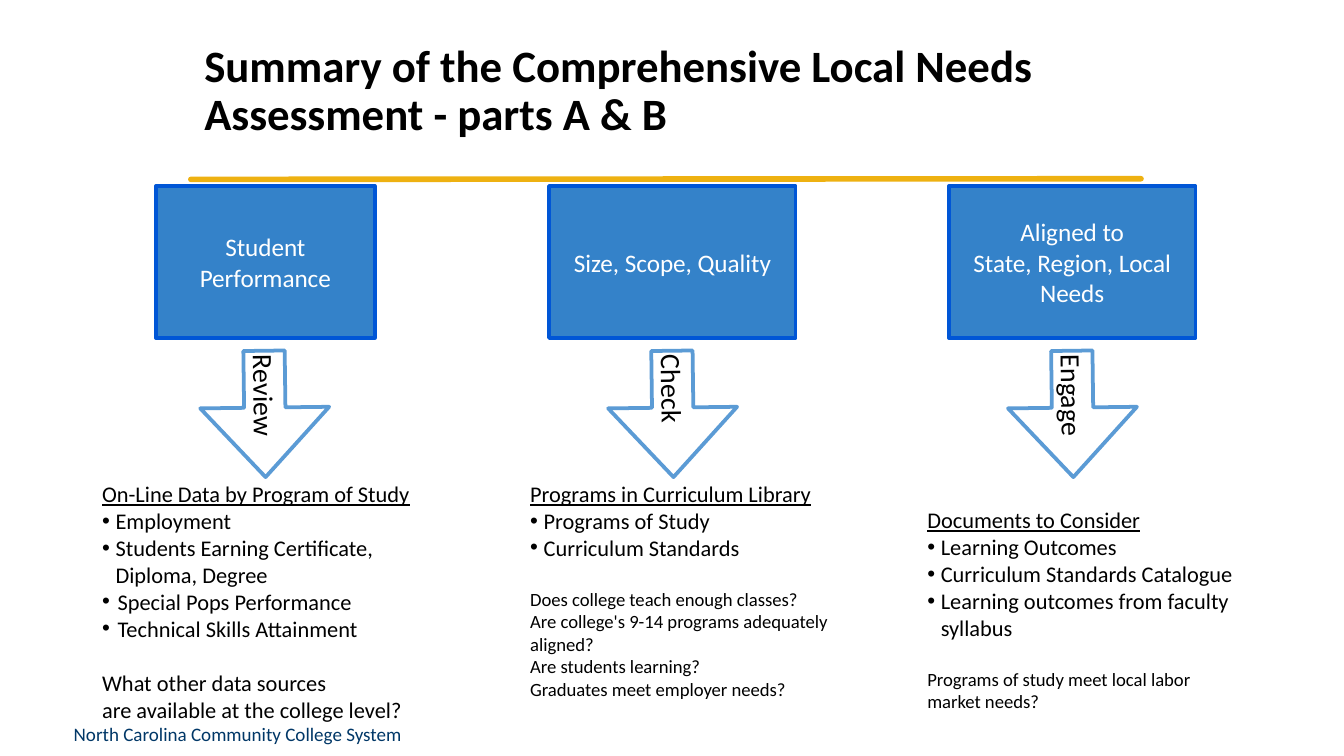
from lxml.etree import SubElement
from pptx import Presentation
from pptx.dml.color import RGBColor
from pptx.enum.shapes import MSO_CONNECTOR, MSO_SHAPE
from pptx.enum.text import MSO_ANCHOR, MSO_AUTO_SIZE, PP_ALIGN
from pptx.oxml.ns import qn
from pptx.util import Pt

PX = 4572
FONT = "Calibri"
COLORS = {
    "text": "000000", "white": "FFFFFF", "box": "3482C9", "box_line": "0056D6",
    "arrow_line": "5B9BD5", "rule": "EEB111", "footer": "003767",
}
BOX_TOP, BOX_HEIGHT = 277, 226
ARROW_TOP, ARROW_WIDTH, ARROW_HEIGHT = 520, 188, 192
BULLET_INDENT, WIDE_INDENT = 20, 23
BLANK_LINE = 14.6

COLUMNS = [
    {
        "box": (232, 326), "label": ["Student Performance"],
        "arrow": (300, "Review"), "list": (146, 707, 498, 376),
        "heading": "On-Line Data by Program of Study",
        "bullets": [
            ("Employment", BULLET_INDENT),
            ("Students Earning Certificate, Diploma, Degree", BULLET_INDENT),
            ("Special Pops Performance", WIDE_INDENT),
            ("Technical Skills Attainment", WIDE_INDENT),
        ],
        "questions": ["What other data sources\vare available at the college level?"],
        "question_size": 12,
    },
    {
        "box": (817, 367), "label": ["Size, Scope, Quality"],
        "arrow": (907, "Check"), "list": (783, 707, 458, 342),
        "heading": "Programs in Curriculum Library",
        "bullets": [
            ("Programs of Study", BULLET_INDENT),
            ("Curriculum Standards", BULLET_INDENT),
        ],
        "questions": [
            "Does college teach enough classes?",
            "Are college's 9-14 programs adequately aligned?",
            "Are students learning?",
            "Graduates meet employer needs?",
        ],
        "question_size": 10,
    },
    {
        "box": (1412, 367), "label": ["Aligned to", "State, Region, Local", "Needs"],
        "arrow": (1502, "Engage"), "list": (1374, 746, 480, 322),
        "heading": "Documents to Consider",
        "bullets": [
            ("Learning Outcomes", BULLET_INDENT),
            ("Curriculum Standards Catalogue", BULLET_INDENT),
            ("Learning outcomes from faculty syllabus", BULLET_INDENT),
        ],
        "questions": ["Programs of study meet local labor market needs?"],
        "question_size": 10,
    },
]


def px(n):
    return n * PX


def rgb(name):
    return RGBColor.from_string(COLORS[name])


def place(sp, left, top, width, height):
    sp.left, sp.top, sp.width, sp.height = map(px, (left, top, width, height))


def set_frame(tf, inset=None):
    tf.word_wrap = True
    tf.auto_size = MSO_AUTO_SIZE.NONE
    tf.vertical_anchor = MSO_ANCHOR.MIDDLE
    if inset is not None:
        tf.margin_left = tf.margin_right = tf.margin_top = tf.margin_bottom = px(inset)


def style(p, size, color="text", align=PP_ALIGN.LEFT, bold=False, underline=False):
    p.alignment = align
    for r in p.runs:
        f = r.font
        f.name, f.size, f.bold, f.underline = FONT, Pt(size), bold, underline
        f.color.rgb = rgb(color)


def set_bullet(p, indent):
    pPr = p._p.get_or_add_pPr()
    pPr.set("marL", str(px(indent)))
    pPr.set("indent", str(-px(indent)))
    if indent:
        SubElement(pPr, qn("a:buFont"), typeface="Arial")
        SubElement(pPr, qn("a:buChar"), char="•")
    else:
        SubElement(pPr, qn("a:buNone"))


def add_title(sp, text):
    place(sp, 284, 28, 1610, 218)
    tf = sp.text_frame
    tf.text = text
    set_frame(tf)
    tf.margin_right = px(60)
    p = tf.paragraphs[0]
    p.line_spacing = 0.9
    style(p, 24, bold=True)


def add_rule(s):
    line = s.shapes.add_connector(MSO_CONNECTOR.STRAIGHT, px(284), px(267), px(1698), px(266))
    line.line.color.rgb = rgb("rule")
    line.line.width = Pt(3)
    line.line._get_or_add_ln().set("cap", "rnd")
    SubElement(line._element.spPr, qn("a:effectLst"))


def add_footer(s, text):
    sp = s.shapes.add_textbox(px(90), px(1066), px(710), px(60))
    tf = sp.text_frame
    tf.word_wrap = True
    tf.text = text
    style(tf.paragraphs[0], 10.2, "footer")


def add_panel(s, kind, bounds, fill, line, lines, size, color, align):
    sp = s.shapes.add_shape(kind, *map(px, bounds))
    sp.shadow.inherit = False
    sp.fill.solid()
    sp.fill.fore_color.rgb = rgb(fill)
    sp.line.color.rgb = rgb(line)
    sp.line.width = Pt(2)
    tf = sp.text_frame
    tf.text = "\n".join(lines)
    set_frame(tf, 6)
    for p in tf.paragraphs:
        style(p, size, color, align)
    return sp


def add_box(s, left, width, lines):
    add_panel(s, MSO_SHAPE.RECTANGLE, (left, BOX_TOP, width, BOX_HEIGHT),
              "box", "box_line", lines, 13.5, "white", PP_ALIGN.CENTER)


def add_arrow(s, left, label):
    sp = add_panel(s, MSO_SHAPE.RIGHT_ARROW, (left, ARROW_TOP, ARROW_WIDTH, ARROW_HEIGHT),
                   "white", "arrow_line", [label], 15, "text", PP_ALIGN.LEFT)
    sp.adjustments[0], sp.adjustments[1] = 0.32, 0.55
    sp.rotation = 89.3


def fill_list(sp, column):
    place(sp, *column["list"])
    bullets, questions = column["bullets"], column["questions"]
    rows = [(column["heading"], 0, 12)]
    rows += [(text, indent, 12) for text, indent in bullets]
    rows += [(text, 0, column["question_size"]) for text in questions]
    tf = sp.text_frame
    tf.text = "\n".join(text for text, _, _ in rows)
    set_frame(tf, 6)
    for i, (p, (_, indent, size)) in enumerate(zip(tf.paragraphs, rows)):
        set_bullet(p, indent)
        p.space_before = Pt(BLANK_LINE if i == len(bullets) + 1 else 0)
        style(p, size, underline=i == 0)


def main():
    prs = Presentation()
    prs.slide_width, prs.slide_height = px(2000), px(1125)
    s = prs.slides.add_slide(prs.slide_layouts[4])
    title, *bodies = list(s.placeholders)
    add_title(title, "Summary of the Comprehensive Local Needs Assessment - parts A & B")
    add_rule(s)
    add_footer(s, "North Carolina Community College System")
    for sp, column in zip(bodies, COLUMNS):
        fill_list(sp, column)
        add_box(s, *column["box"], column["label"])
        add_arrow(s, *column["arrow"])
    for sp in bodies[len(COLUMNS):]:
        sp._element.getparent().remove(sp._element)
    prs.save("out.pptx")


if __name__ == "__main__":
    main()
